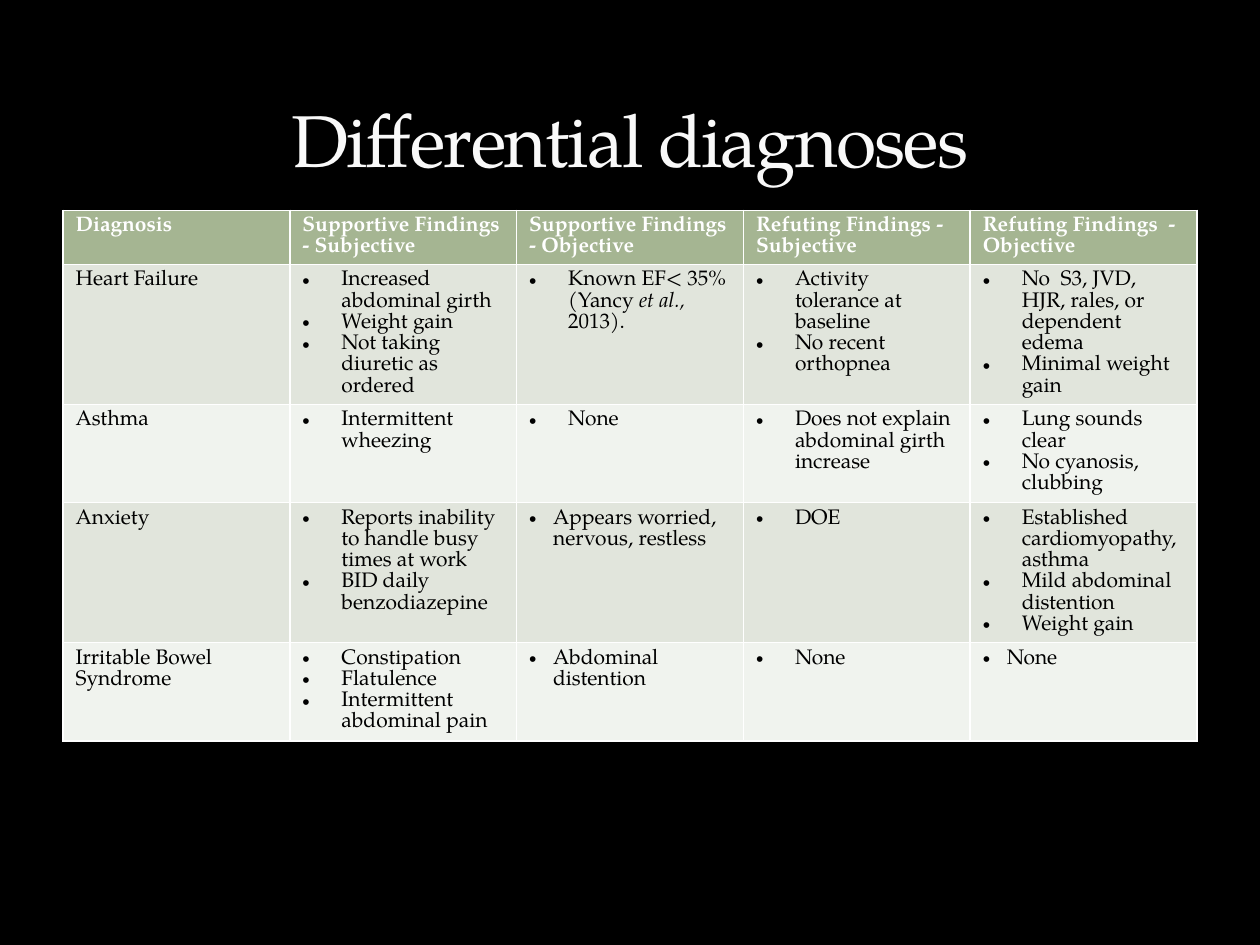
"""Builds a slide with a table of differential diagnoses."""
import pptx
import pptx.dml.color
import pptx.enum.text
import pptx.oxml
import pptx.oxml.ns
import pptx.util
from pptx.util import Inches

FONT = "TeX Gyre Pagella"
COLORS = {
    "background": "000000", "title": "F9F9F9", "header": "A5B592",
    "header_text": "FFFFFF", "text": "000000",
    "odd_row": "E1E5DC", "even_row": "F0F3EE",
}
WIDE, NARROW = 0.31, 0.19
HEADERS = [
    "Diagnosis", "Supportive Findings - Subjective", "Supportive Findings - Objective",
    "Refuting Findings - Subjective", "Refuting Findings  - Objective",
]
DIAGNOSES = [
    ("Heart Failure", 1.11, [
        (WIDE, ["Increased abdominal girth", "Weight gain", "Not taking diuretic as ordered"]),
        (WIDE, ["Known EF< 35% (Yancy |et al., |2013)."]),
        (WIDE, ["Activity tolerance at baseline", "No recent orthopnea"]),
        (WIDE, ["No  S3, JVD, HJR, rales, or dependent edema", "Minimal weight gain"]),
    ]),
    ("Asthma", 0.78, [
        (WIDE, ["Intermittent wheezing"]),
        (WIDE, ["None"]),
        (WIDE, ["Does not explain abdominal girth increase"]),
        (WIDE, ["Lung sounds clear", "No cyanosis, clubbing"]),
    ]),
    ("Anxiety", 1.11, [
        (WIDE, ["Reports inability to handle busy times at work", "BID daily benzodiazepine"]),
        (NARROW, ["Appears worried, nervous, restless"]),
        (WIDE, ["DOE"]),
        (WIDE, ["Established cardiomyopathy, asthma", "Mild abdominal distention", "Weight gain"]),
    ]),
    ("Irritable Bowel Syndrome", 0.78, [
        (WIDE, ["Constipation", "Flatulence", "Intermittent abdominal pain"]),
        (NARROW, ["Abdominal distention"]),
        (WIDE, ["None"]),
        (NARROW, ["None"]),
    ]),
]


def add_span(para, text, size, color, bold=False, italic=False):
    """Add one formatted run to a paragraph."""
    span = para.add_run()
    span.text = text
    span.font.name = FONT
    span.font.size = pptx.util.Pt(size)
    span.font.bold = bold
    span.font.italic = italic
    span.font.color.rgb = pptx.dml.color.RGBColor.from_string(COLORS[color])
    return span


def fill_cell(cell, fill, lines, color, bold=False, indent=0):
    """Fill a cell with lines, bulleted if indented; bars set off italics."""
    cell.fill.solid()
    cell.fill.fore_color.rgb = pptx.dml.color.RGBColor.from_string(COLORS[fill])
    for number, line in enumerate(lines):
        frame = cell.text_frame
        para = frame.add_paragraph() if number else frame.paragraphs[0]
        if indent:
            properties = para._p.get_or_add_pPr()
            properties.set("marL", str(Inches(indent)))
            properties.set("indent", str(-Inches(indent)))
            for tag, name, value in (("buFont", "typeface", "Arial"), ("buChar", "char", "•")):
                bullet = pptx.oxml.parse_xml(f"<a:{tag} {pptx.oxml.ns.nsdecls('a')}/>")
                bullet.set(name, value)
                properties.append(bullet)
        for part, text in enumerate(line.split("|")):
            add_span(para, text, 12, color, bold, italic=part % 2 == 1)


deck = pptx.Presentation()
deck.slide_width, deck.slide_height = Inches(10), Inches(7.5)
page = deck.slides.add_slide(deck.slide_layouts[5])
page.background.fill.solid()
page.background.fill.fore_color.rgb = pptx.dml.color.RGBColor.from_string(COLORS["background"])

title = page.shapes.title
title.left, title.top, title.width, title.height = Inches(0.5), Inches(0.17), Inches(9), Inches(1.33)
title.text_frame.vertical_anchor = pptx.enum.text.MSO_ANCHOR.BOTTOM
heading = title.text_frame.paragraphs[0]
heading.alignment = pptx.enum.text.PP_ALIGN.CENTER
span = add_span(heading, "Differential diagnoses", 42, "title")
span.font._element.set("spc", "-100")

table = page.shapes.add_table(
    len(DIAGNOSES) + 1, len(HEADERS), Inches(0.5), Inches(1.67), Inches(9), Inches(4.2)
).table
table.rows[0].height = Inches(0.42)
for column, header in enumerate(HEADERS):
    fill_cell(table.cell(0, column), "header", [header], "header_text", bold=True)
for row, (diagnosis, height, findings) in enumerate(DIAGNOSES, start=1):
    table.rows[row].height = Inches(height)
    fill = "odd_row" if row % 2 else "even_row"
    fill_cell(table.cell(row, 0), fill, [diagnosis], "text")
    for column, (indent, lines) in enumerate(findings, start=1):
        fill_cell(table.cell(row, column), fill, lines, "text", indent=indent)

deck.save("out.pptx")
